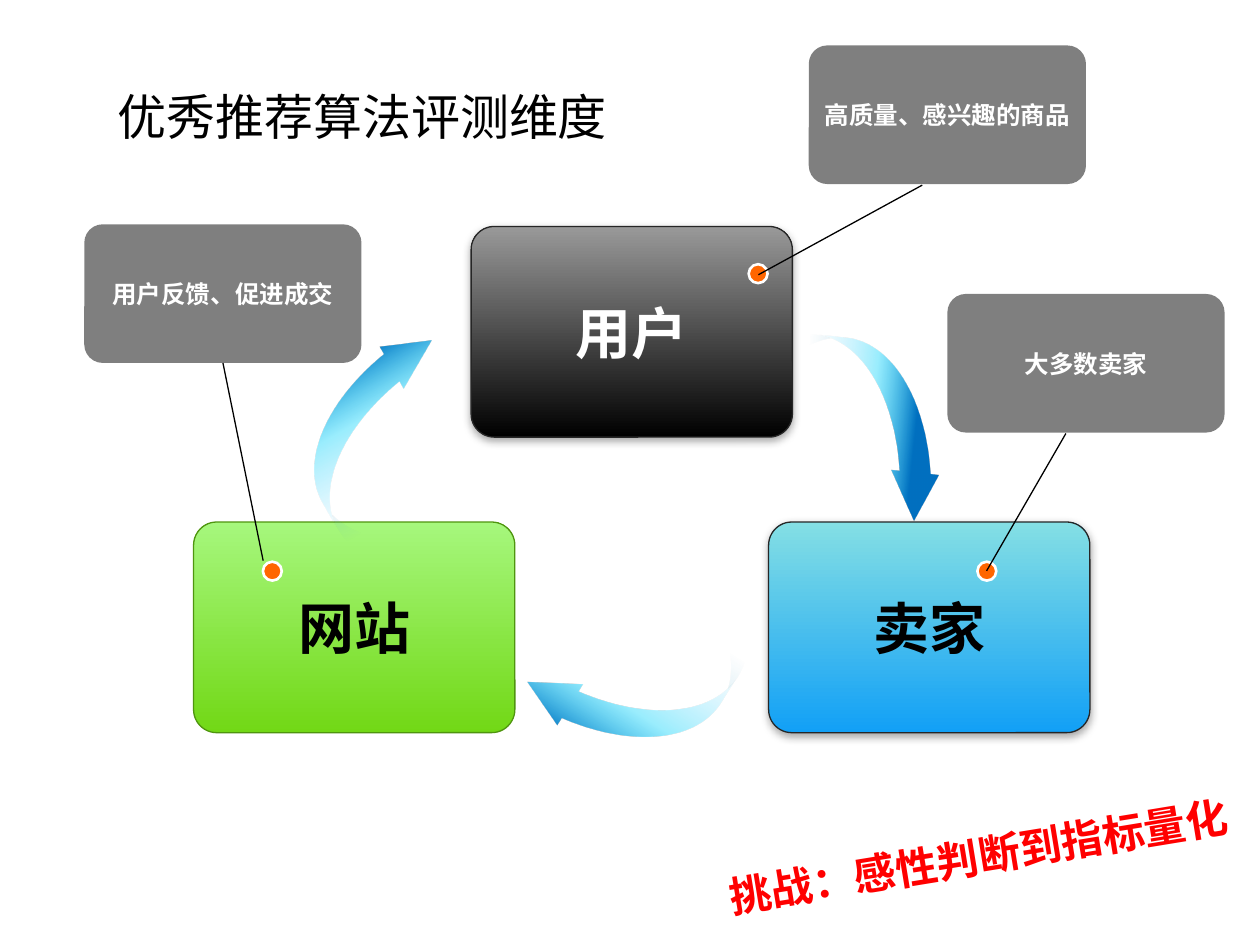
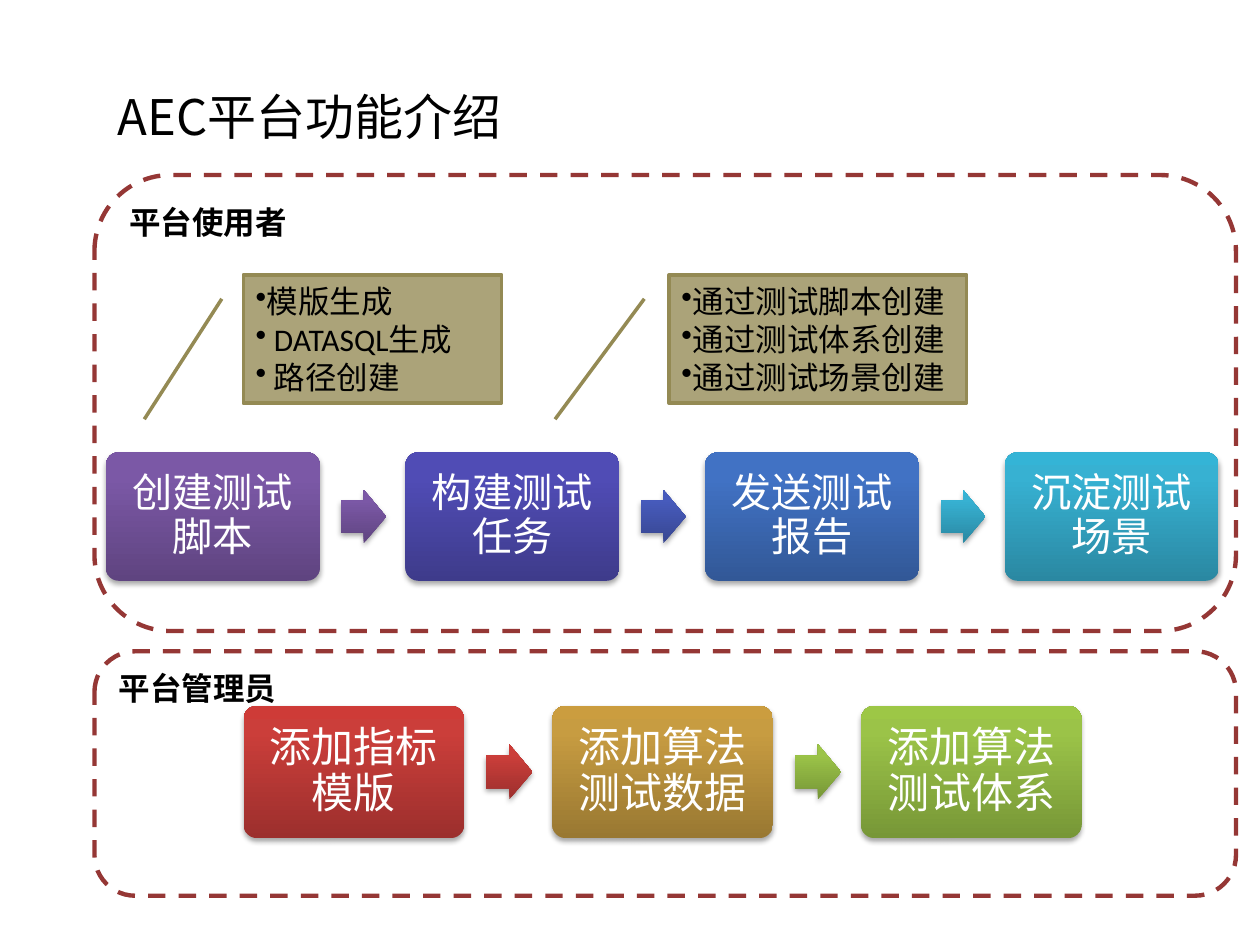
from lxml import etree
from pptx import Presentation
from pptx.dml.color import RGBColor
from pptx.enum.dml import MSO_LINE
from pptx.enum.shapes import MSO_CONNECTOR, MSO_SHAPE
from pptx.enum.text import MSO_ANCHOR, PP_ALIGN
from pptx.oxml.ns import qn
from pptx.util import Pt

ROUND = MSO_SHAPE.ROUNDED_RECTANGLE
OVAL = MSO_SHAPE.OVAL
CURVE = MSO_SHAPE.CURVED_DOWN_ARROW
ARROW = MSO_SHAPE.RIGHT_ARROW
CALLOUT = MSO_SHAPE.LINE_CALLOUT_1
LINE = MSO_CONNECTOR.STRAIGHT
DASH = MSO_LINE.DASH
LEFT, CENTER = PP_ALIGN.LEFT, PP_ALIGN.CENTER
TOP, MIDDLE = MSO_ANCHOR.TOP, MSO_ANCHOR.MIDDLE

HEAD_FONT, BODY_FONT, NOTE_FONT = "Noto Sans CJK SC", "Calibri", "Arial"


def rgb(code):
    return RGBColor.from_string(code)


BLACK, WHITE = rgb("000000"), rgb("FFFFFF")
RED, ORANGE = rgb("FF0000"), rgb("FF6600")
EDGE, LEAF = rgb("262626"), rgb("4F950F")
KHAKI, BRICK = rgb("948A54"), rgb("953735")


def tone(low, mid, high):
    """Stops of a bevelled fill, from bottom to top."""
    return [(0, rgb(low), 100), (80, rgb(mid), 100), (100, rgb(high), 100)]


def fade(low, high):
    return [(0, rgb(low), 100), (100, rgb(high), 100)]


PURPLE = tone("5F4480", "7B58A6", "7C57A8")
VIOLET = tone("3E3B8B", "504CB5", "4F4BB8")
INDIGO = tone("374691", "475BBC", "455ABF")
BLUE = tone("325897", "4172C4", "3F72C7")
TEAL = tone("2A88A2", "37B1D2", "34B4D6")
CRIMSON = tone("9C2F2D", "CB3E3A", "CE3B37")
GOLD = tone("997832", "C79C41", "CB9D3F")
GREEN = tone("779737", "9BC348", "9DC746")
COAL = fade("000000", "999999")
SKY = fade("12A0F6", "84DFE4")
LIME = fade("72D816", "A6F77D")
SWEEP = [(18, rgb("0070C0"), 100), (34, rgb("13D6FD"), 42),
         (59, rgb("7FD6FF"), 0), (100, rgb("E6E6E6"), 0)]


# ---- Fills, lines and shadows ----
def add_node(parent, tag, **attrs):
    node = etree.SubElement(parent, qn(tag))
    for key, value in attrs.items():
        node.set(key, str(value))
    return node


def add_color(parent, color, alpha):
    node = add_node(parent, "a:srgbClr", val=color)
    if alpha < 100:
        add_node(node, "a:alpha", val=alpha * 1000)


def blend(shape, stops, angle=90):
    shape.fill.gradient()
    shape.fill.gradient_angle = angle
    items = shape.element.spPr.find(qn("a:gradFill")).find(qn("a:gsLst"))
    for old in list(items):
        items.remove(old)
    for place, color, alpha in stops:
        add_color(add_node(items, "a:gs", pos=place * 1000), color, alpha)


def tint(shape, color, alpha=100):
    shape.fill.solid()
    shape.fill.fore_color.rgb = color
    if alpha < 100:
        node = shape.element.spPr.find(qn("a:solidFill"))[0]
        add_node(node, "a:alpha", val=alpha * 1000)


def stroke(shape, color, width):
    shape.line.color.rgb = color
    shape.line.width = Pt(width)


def shade(shape, blur):
    effects = shape.element.spPr.find(qn("a:effectLst"))
    drop = add_node(effects, "a:outerShdw", blurRad=Pt(blur), dist=Pt(1.8),
                    dir=90 * 60000, rotWithShape=0)
    add_color(drop, BLACK, 35)


# ---- Basic elements ----
def add_form(slide, kind, box, adjust=(), turn=0):
    shape = slide.shapes.add_shape(kind, *map(Pt, box))
    shape.shadow.inherit = False
    shape.fill.background()
    shape.line.fill.background()
    for i, value in enumerate(adjust):
        shape.adjustments[i] = value
    shape.rotation = turn
    return shape


def write(shape, lines, size, color, font=BODY_FONT, bold=False,
          align=CENTER, anchor=MIDDLE, wrap=True, bullet=False):
    frame = shape.text_frame
    frame.word_wrap = wrap
    frame.vertical_anchor = anchor
    frame.text = "\n".join(lines)
    for para in frame.paragraphs:
        if bullet:
            add_node(para._p.get_or_add_pPr(), "a:buChar", char="•")
        para.alignment = align
        para.font.name = font
        para.font.size = Pt(size)
        para.font.bold = bold
        para.font.color.rgb = color
    return frame


def add_line(slide, start, end):
    line = slide.shapes.add_connector(LINE, *map(Pt, start + end))
    stroke(line, BLACK, 0.75)
    add_node(line.element.spPr, "a:effectLst")


def add_page(deck, title):
    slide = deck.slides.add_slide(deck.slide_layouts[5])
    head = slide.shapes.title
    head.left, head.top, head.width, head.height = map(Pt, (60, 21, 636, 90))
    write(head, [title], 28, BLACK, HEAD_FONT, align=LEFT)
    return slide


# ---- Parts of the cycle ----
def add_role(slide, name, left, top, stops, ink, edge, drop=True):
    role = add_form(slide, ROUND, (left, top, 183.6, 120.4), [0.11])
    blend(role, stops)
    stroke(role, edge, 0.75)
    if drop:
        shade(role, 5)
    write(role, [name], 32, ink, bold=True)


def add_curve(slide, left, top, turn):
    curve = add_form(slide, CURVE, (left, top, 139, 99.4),
                     [0.179, 0.276, 0.277], turn)
    blend(curve, SWEEP, 180)


def add_note(slide, text, left, top, dot, start, end):
    note = add_form(slide, ROUND, (left, top, 158.4, 79.2), [0.133])
    tint(note, BLACK, 50)
    write(note, [text], 14, WHITE, NOTE_FONT, True, wrap=False)
    mark = add_form(slide, OVAL, dot + (10.8, 10.8))
    tint(mark, ORANGE)
    stroke(mark, WHITE, 1.5)
    add_line(slide, start, end)


# ---- Parts of the flow ----
def add_chain(slide, left, top, width, size, steps, links):
    """Boxes and arrows whose sizes and gaps all follow the box width."""
    high, pitch = 0.6 * width, 1.4 * width
    wide, tall = 0.21 * width, 0.25 * width
    for i, (text, stops) in enumerate(steps):
        step = add_form(slide, ROUND, (left + i * pitch, top, width, high),
                        [0.1])
        blend(step, stops)
        shade(step, 3.1)
        frame = write(step, [text], size, WHITE)
        frame.paragraphs[0].line_spacing = 0.9
    for i, stops in enumerate(links):
        box = (left + i * pitch + 1.1 * width, top + (high - tall) / 2,
               wide, tall)
        arrow = add_form(slide, ARROW, box, [0.6, 0.5])
        blend(arrow, stops)
        shade(arrow, 3.1)


def add_list(slide, left, width, lines):
    call = add_form(slide, CALLOUT, (left, 157, width, 73.4))
    tint(call, KHAKI, 78)
    stroke(call, KHAKI, 2)
    write(call, lines, 18, BLACK, align=LEFT, bullet=True)


def add_zone(slide, name, top, height):
    zone = add_form(slide, ROUND, (54, top, 652.3, height))
    stroke(zone, BRICK, 2.5)
    zone.line.dash_style = DASH
    write(zone, [name], 18, BLACK, bold=True, align=LEFT, anchor=TOP)


# ---- Slides ----
def build_cycle(deck):
    slide = add_page(deck, "优秀推荐算法评测维度")
    add_role(slide, "用户", 269.2, 129.4, COAL, WHITE, EDGE)
    add_role(slide, "卖家", 439.2, 298.3, SKY, BLACK, EDGE)
    add_role(slide, "网站", 110.6, 298.3, LIME, BLACK, LEAF, drop=False)

    for left, top, turn in [(402.5, 192.2, 6.1), (161.3, 218.2, 240.3),
                            (303.8, 319.7, 122.5)]:
        add_curve(slide, left, top, turn)

    text = slide.shapes.add_textbox(*map(Pt, (409.7, 470.2, 312.5, 58.3)))
    text.rotation = 350.7
    write(text, ["挑战：感性判断到指标量化"], 24, RED, bold=True,
          align=LEFT, anchor=TOP)

    add_note(slide, "高质量、感兴趣的商品", 462.2, 26,
             (427.8, 151), (527, 105.8), (433.4, 157))
    add_note(slide, "大多数卖家", 541.4, 168,
             (558.5, 321), (609.1, 247.7), (563.8, 326.2))
    add_note(slide, "用户反馈、促进成交", 48.2, 128.2,
             (150.2, 321), (127.4, 207.4), (150.4, 320.4))


def build_flow(deck):
    slide = add_page(deck, "AEC平台功能介绍")
    add_chain(slide, 60.5, 258.5, 122.3, 23,
              [("创建测试脚本", PURPLE), ("构建测试任务", VIOLET),
               ("发送测试报告", BLUE), ("沉淀测试场景", TEAL)],
              [PURPLE, INDIGO, TEAL])
    add_list(slide, 139, 147.6, ["模版生成", " DATASQL生成", " 路径创建"])
    add_list(slide, 382.3, 170,
             [f"通过测试{item}创建" for item in ("脚本", "体系", "场景")])
    add_chain(slide, 139.2, 403.3, 126, 24,
              [("添加指标模版", CRIMSON), ("添加算法测试数据", GOLD),
               ("添加算法测试体系", GREEN)],
              [CRIMSON, GREEN])
    add_zone(slide, "平台使用者", 100, 260.6)
    add_zone(slide, "平台管理员", 372.2, 139.7)


def main():
    deck = Presentation()
    deck.slide_width, deck.slide_height = Pt(720), Pt(540)
    build_cycle(deck)
    build_flow(deck)
    deck.save("out.pptx")


if __name__ == "__main__":
    main()
